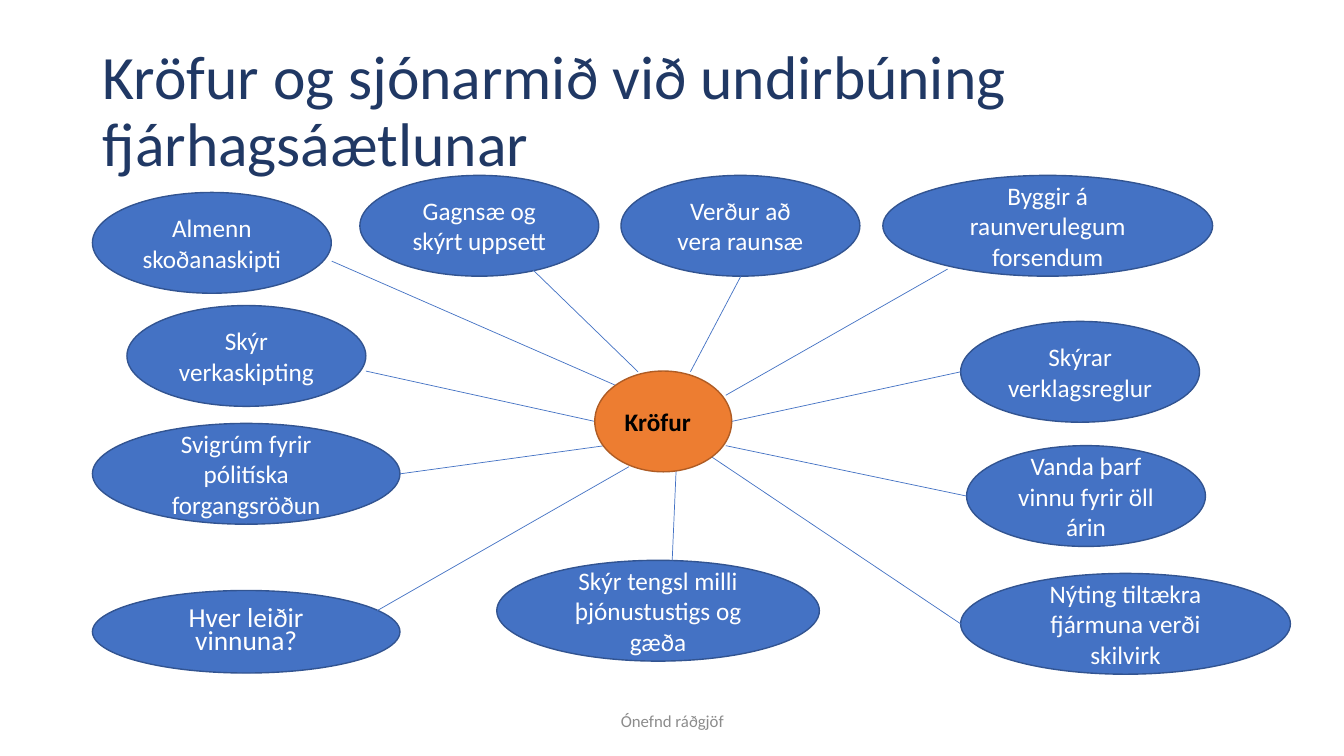
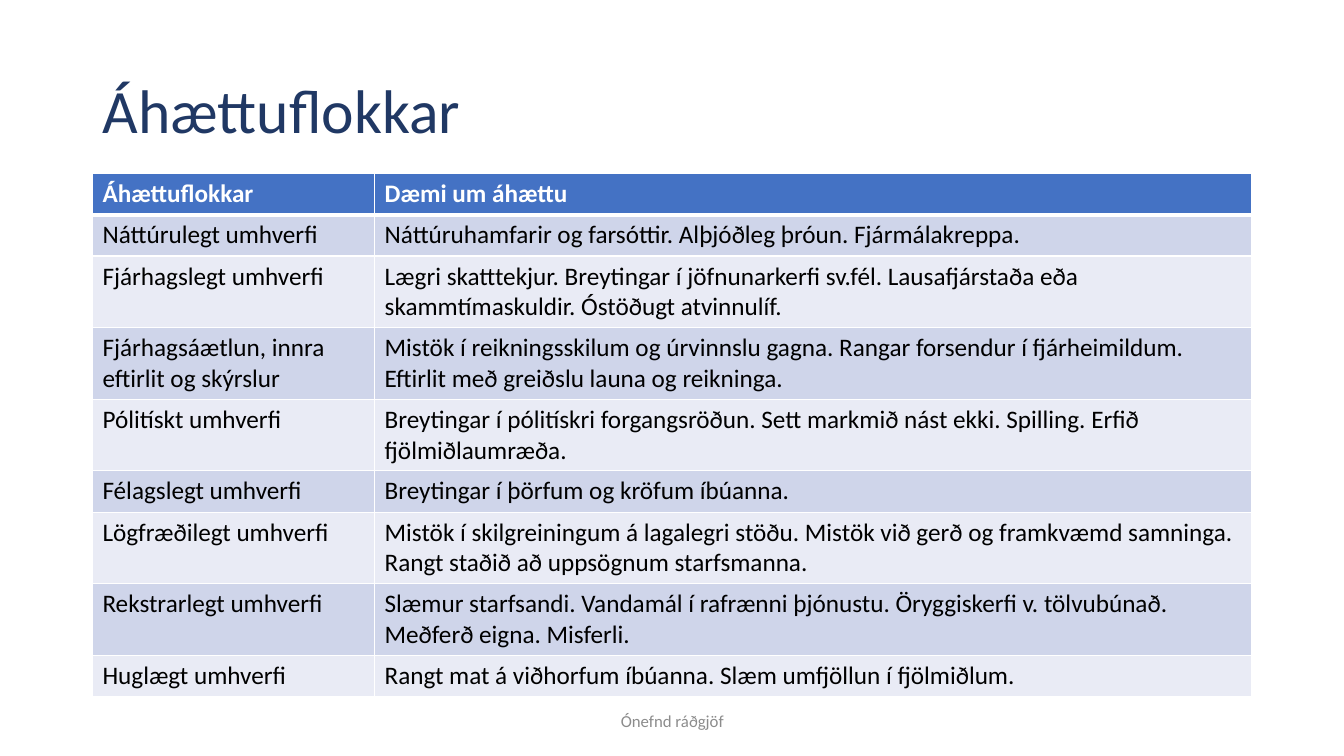
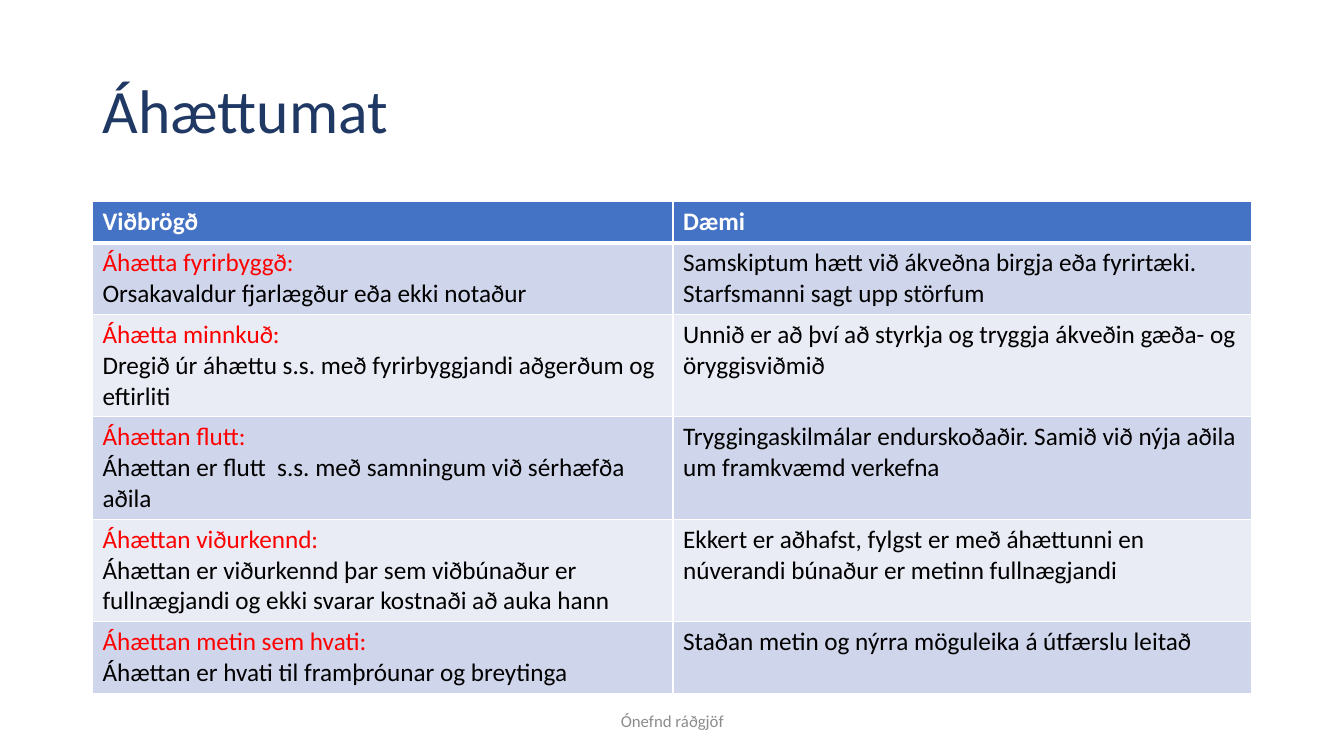
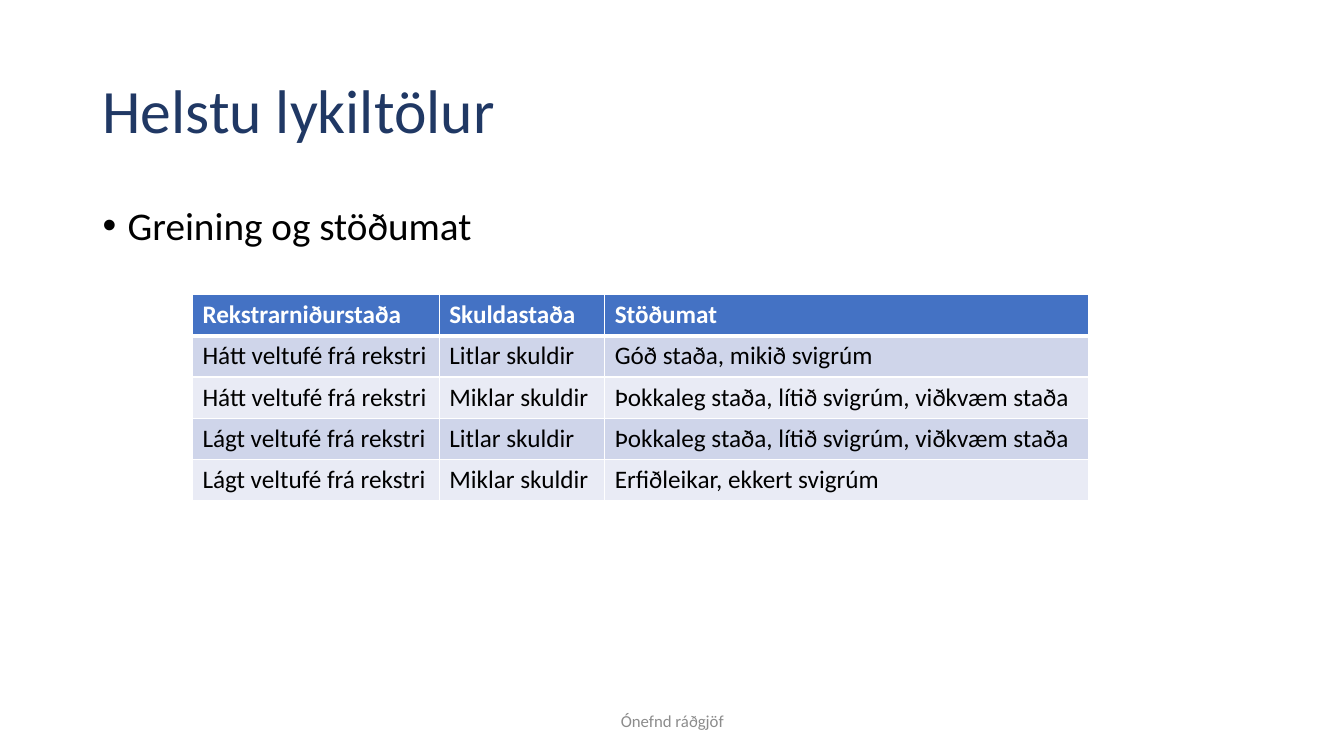
from lxml import etree
from pptx import Presentation
from pptx.dml.color import RGBColor
from pptx.enum.shapes import MSO_CONNECTOR, MSO_SHAPE
from pptx.enum.text import MSO_ANCHOR, MSO_AUTO_SIZE, PP_ALIGN
from pptx.oxml.ns import qn
from pptx.util import Cm, Pt

ELLIPSE = MSO_SHAPE.OVAL
STRAIGHT = MSO_CONNECTOR.STRAIGHT
LEFT, CENTER = PP_ALIGN.LEFT, PP_ALIGN.CENTER
MIDDLE, TOP = MSO_ANCHOR.MIDDLE, MSO_ANCHOR.TOP
NO_FIT = MSO_AUTO_SIZE.NONE

# Colours
NAVY = RGBColor(0x20, 0x38, 0x64)
BLUE = RGBColor(0x44, 0x72, 0xC4)
DARK_BLUE = RGBColor(0x32, 0x54, 0x91)
ORANGE = RGBColor(0xED, 0x7D, 0x31)
BROWN = RGBColor(0xAF, 0x5C, 0x24)
BAND_DARK = RGBColor(0xCF, 0xD5, 0xEA)
BAND_LIGHT = RGBColor(0xE9, 0xEB, 0xF5)
GREY = RGBColor(0x8C, 0x8C, 0x8C)
RED = RGBColor(0xFF, 0x00, 0x00)
WHITE = RGBColor(0xFF, 0xFF, 0xFF)
BLACK = RGBColor(0x00, 0x00, 0x00)

# Shared measures, in cm
MARGIN = 2.33
CONTENT_WIDTH = 29.21
BUBBLE_HEIGHT = 2.54
ROW_HEIGHT = 1.04

# Paragraph formats
TITLE_FORMAT = {"alignment": LEFT, "line_spacing": 0.9}
LIST_FORMAT = {"alignment": LEFT, "line_spacing": 0.9, "space_before": Pt(10)}
CENTER_FORMAT = {"alignment": CENTER}
LEFT_FORMAT = {"alignment": LEFT}
TIGHT_FORMAT = {"alignment": CENTER, "line_spacing": 0.7, "space_before": Pt(10)}


def format_paragraph(paragraph, values, size, color, bold=False):
    for name, value in values.items():
        setattr(paragraph, name, value)
    font_values = {"name": "Calibri", "size": Pt(size), "bold": bold}
    for run in paragraph.runs:
        for name, value in font_values.items():
            setattr(run.font, name, value)
        run.font.color.rgb = color


def add_banded_table(slide, left, top, widths, rows):
    table = slide.shapes.add_table(
        len(rows), len(widths), Cm(left), Cm(top),
        Cm(sum(widths)), Cm(ROW_HEIGHT * len(rows))).table
    for column, width in zip(table.columns, widths):
        column.width = Cm(width)
    for row_index, row in enumerate(rows):
        header = row_index == 0
        fill_color = BLUE if header else (BAND_LIGHT, BAND_DARK)[row_index % 2]
        # The thick line under the header is shared by the first two rows
        borders = {"lnL": 1, "lnR": 1, "lnT": 3 if row_index == 1 else 1,
                   "lnB": 3 if header else 1}
        for column_index, text in enumerate(row):
            cell = table.cell(row_index, column_index)
            cell.text = text
            properties = cell._tc.get_or_add_tcPr()
            for tag, width in borders.items():
                line = etree.SubElement(properties, qn("a:" + tag), w=str(Pt(width)))
                solid = etree.SubElement(line, qn("a:solidFill"))
                etree.SubElement(solid, qn("a:srgbClr"), val=str(WHITE))
            cell.fill.solid()
            cell.fill.fore_color.rgb = fill_color
            # In a cell of two paragraphs the first one is a red heading
            paragraphs = cell.text_frame.paragraphs
            for index, paragraph in enumerate(paragraphs):
                heading = index == 0 and len(paragraphs) > 1
                color = WHITE if header else RED if heading else BLACK
                format_paragraph(paragraph, LEFT_FORMAT, 18, color, header)


presentation = Presentation()
presentation.slide_width = Cm(33.87)
presentation.slide_height = Cm(19.05)
CONTENT_LAYOUT = presentation.slide_layouts[1]
TITLE_LAYOUT = presentation.slide_layouts[5]

# Slides with title and footer
slide_titles = [
    ("Kröfur og sjónarmið við undirbúning fjárhagsáætlunar", TITLE_LAYOUT),
    ("Áhættuflokkar", TITLE_LAYOUT),
    ("Áhættumat", TITLE_LAYOUT),
    ("Helstu lykiltölur", CONTENT_LAYOUT),
]
for title_text, layout in slide_titles:
    slide = presentation.slides.add_slide(layout)
    title = slide.shapes.title
    footer = slide.shapes.add_textbox(Cm(11.23), Cm(17.65), Cm(11.43), Cm(1.02))
    title.left, title.top = Cm(MARGIN), Cm(1.01)
    title.width, title.height = Cm(CONTENT_WIDTH), Cm(3.68)
    for shape, text, values, size, color in (
            (title, title_text, TITLE_FORMAT, 44, NAVY),
            (footer, "Ónefnd ráðgjöf", CENTER_FORMAT, 12, GREY)):
        frame = shape.text_frame
        frame.text = text
        frame.word_wrap = True
        frame.auto_size = NO_FIT
        frame.vertical_anchor = MIDDLE
        format_paragraph(frame.paragraphs[0], values, size, color)

requirements_slide, categories_slide, response_slide, figures_slide = presentation.slides

# Slide 1: requirements; text, left, top, width, line start, line end
requirements = [
    ("Almenn skoðanaskipti", 2.33, 4.85, 6.02, (8.36, 6.58), (15.49, 9.7)),
    ("Gagnsæ og skýrt uppsett", 9.07, 4.42, 6.02, (13.41, 6.78), (16.08, 9.37)),
    ("Verður að vera raunsæ", 15.65, 4.42, 6.02, (18.67, 6.96), (17.4, 9.37)),
    ("Byggir á raunverulegum forsendum", 22.25, 4.42, 8.31, (23.88, 6.78), (18.29, 9.96)),
    ("Skýrar verklagsreglur", 24.21, 8.1, 6.02, (24.21, 9.37), (18.44, 10.62)),
    ("Vanda þarf vinnu fyrir öll árin", 24.36, 11.23, 6.02, (24.36, 12.5), (18.29, 11.23)),
    ("Nýting tiltækra fjármuna verði skilvirk", 24.21, 14.45, 8.31,
     (24.21, 15.72), (17.93, 11.51)),
    ("Skýr tengsl milli þjónustustigs og gæða", 12.52, 14.12, 8.13,
     (16.94, 14.12), (17.04, 11.81)),
    ("Hver leiðir vinnuna?", 2.33, 14.88, 7.75, (9.5, 15.39), (15.85, 11.76)),
    ("Svigrúm fyrir pólitíska forgangsröðun", 2.33, 10.67, 7.75,
     (10.08, 11.94), (15.24, 11.23)),
    ("Skýr verkaskipting", 3.2, 7.7, 6.02, (9.22, 9.35), (14.99, 10.62)),
    ("Kröfur", 14.99, 9.35, 3.45, None, None),
]
for text, left, top, width, start, end in requirements:
    height, fill_color, line_color = BUBBLE_HEIGHT, BLUE, DARK_BLUE
    values, size, color = CENTER_FORMAT, 18, WHITE
    is_hub = start is None
    if is_hub:
        fill_color, line_color, values, color = ORANGE, BROWN, LEFT_FORMAT, BLACK
    elif text == "Hver leiðir vinnuna?":
        height, values, size = 2.08, TIGHT_FORMAT, 19.6
    bubble = requirements_slide.shapes.add_shape(
        ELLIPSE, Cm(left), Cm(top), Cm(width), Cm(height))
    bubble.shadow.inherit = False
    bubble.fill.solid()
    bubble.fill.fore_color.rgb = fill_color
    bubble.line.color.rgb = line_color
    bubble.line.width = Pt(1)
    bubble.text_frame.text = text
    bubble.text_frame.word_wrap = True
    bubble.text_frame.vertical_anchor = MIDDLE
    format_paragraph(bubble.text_frame.paragraphs[0], values, size, color, is_hub)
    if not is_hub:
        connector = requirements_slide.shapes.add_connector(
            STRAIGHT, *(Cm(value) for value in start + end))
        connector.line.color.rgb = BLUE
        connector.line.width = Pt(0.5)
        etree.SubElement(connector._element.spPr, qn("a:effectLst"))

# Slide 2: risk categories
add_banded_table(categories_slide, MARGIN, 4.37, (7.11, 22.1), [
    ("Áhættuflokkar", "Dæmi um áhættu"),
    ("Náttúrulegt umhverfi",
     "Náttúruhamfarir og farsóttir. Alþjóðleg þróun. Fjármálakreppa."),
    ("Fjárhagslegt umhverfi",
     "Lægri skatttekjur. Breytingar í jöfnunarkerfi sv.fél. Lausafjárstaða eða "
     "skammtímaskuldir. Óstöðugt atvinnulíf."),
    ("Fjárhagsáætlun, innra eftirlit og skýrslur",
     "Mistök í reikningsskilum og úrvinnslu gagna. Rangar forsendur í fjárheimildum. "
     "Eftirlit með greiðslu launa og reikninga."),
    ("Pólitískt umhverfi",
     "Breytingar í pólitískri forgangsröðun. Sett markmið nást ekki. Spilling. "
     "Erfið fjölmiðlaumræða."),
    ("Félagslegt umhverfi", "Breytingar í þörfum og kröfum íbúanna."),
    ("Lögfræðilegt umhverfi",
     "Mistök í skilgreiningum á lagalegri stöðu. Mistök við gerð og framkvæmd samninga. "
     "Rangt staðið að uppsögnum starfsmanna."),
    ("Rekstrarlegt umhverfi",
     "Slæmur starfsandi. Vandamál í rafrænni þjónustu. Öryggiskerfi v. tölvubúnað. "
     "Meðferð eigna. Misferli."),
    ("Huglægt umhverfi",
     "Rangt mat á viðhorfum íbúanna. Slæm umfjöllun í fjölmiðlum."),
])

# Slide 3: responses to risk
add_banded_table(response_slide, MARGIN, 5.08, (14.63, 14.58), [
    ("Viðbrögð", "Dæmi"),
    ("Áhætta fyrirbyggð:\nOrsakavaldur fjarlægður eða ekki notaður",
     "Samskiptum hætt við ákveðna birgja eða fyrirtæki. Starfsmanni sagt upp störfum"),
    ("Áhætta minnkuð:\nDregið úr áhættu s.s. með fyrirbyggjandi aðgerðum og eftirliti",
     "Unnið er að því að styrkja og tryggja ákveðin gæða- og öryggisviðmið"),
    ("Áhættan flutt:\nÁhættan er flutt  s.s. með samningum við sérhæfða aðila",
     "Tryggingaskilmálar endurskoðaðir. Samið við nýja aðila um framkvæmd verkefna"),
    ("Áhættan viðurkennd:\nÁhættan er viðurkennd þar sem viðbúnaður er fullnægjandi "
     "og ekki svarar kostnaði að auka hann",
     "Ekkert er aðhafst, fylgst er með áhættunni en núverandi búnaður er metinn "
     "fullnægjandi"),
    ("Áhættan metin sem hvati:\nÁhættan er hvati til framþróunar og breytinga",
     "Staðan metin og nýrra möguleika á útfærslu leitað"),
])

# Slide 4: key figures
body = figures_slide.placeholders[1]
body.left, body.top = Cm(MARGIN), Cm(5.08)
body.width, body.height = Cm(CONTENT_WIDTH), Cm(12.09)
body.text_frame.text = "Greining og stöðumat"
body.text_frame.auto_size = NO_FIT
body.text_frame.vertical_anchor = TOP
bullet = body.text_frame.paragraphs[0]
format_paragraph(bullet, LIST_FORMAT, 28, BLACK)
bullet_properties = bullet._p.get_or_add_pPr()
bullet_properties.set("marL", str(Pt(18)))
bullet_properties.set("indent", str(-Pt(18)))

add_banded_table(figures_slide, 4.85, 7.42, (6.22, 4.17, 12.19), [
    ("Rekstrarniðurstaða", "Skuldastaða", "Stöðumat"),
    ("Hátt veltufé frá rekstri", "Litlar skuldir", "Góð staða, mikið svigrúm"),
    ("Hátt veltufé frá rekstri", "Miklar skuldir",
     "Þokkaleg staða, lítið svigrúm, viðkvæm staða"),
    ("Lágt veltufé frá rekstri", "Litlar skuldir",
     "Þokkaleg staða, lítið svigrúm, viðkvæm staða"),
    ("Lágt veltufé frá rekstri", "Miklar skuldir", "Erfiðleikar, ekkert svigrúm"),
])

presentation.save("out.pptx")
